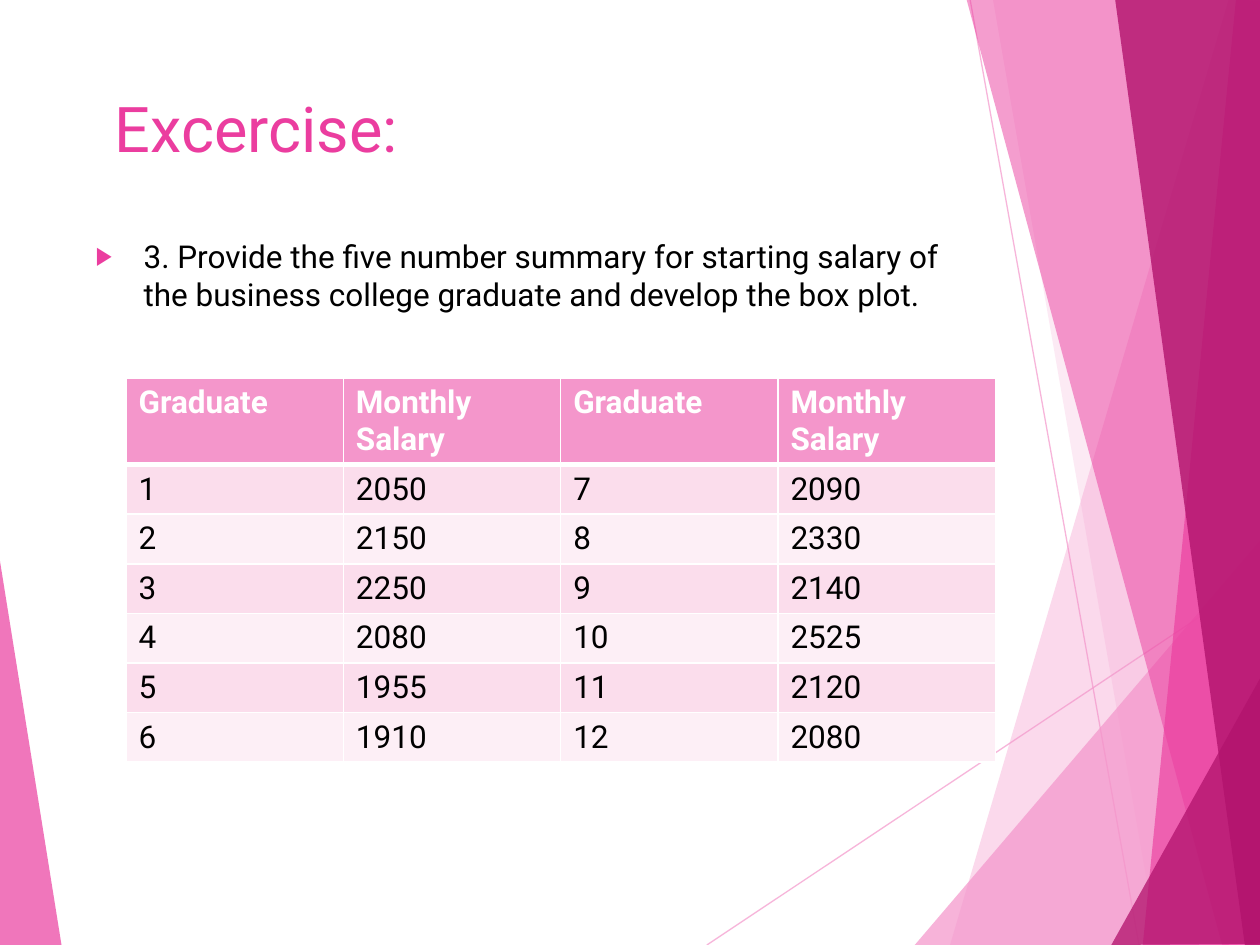
import pptx
import pptx.dml.color
import pptx.enum.shapes
import pptx.enum.text
import pptx.oxml
import pptx.oxml.ns
import pptx.util
from lxml import etree

Inches, Pt = pptx.util.Inches, pptx.util.Pt
RGBColor = pptx.dml.color.RGBColor
qn = pptx.oxml.ns.qn

WHITE = RGBColor(0xFF, 0xFF, 0xFF)
BLACK = RGBColor(0, 0, 0)
LIGHT = RGBColor(0xF4, 0x96, 0xCB)
PINK = RGBColor(0xEB, 0x3D, 0x9F)
DARK = RGBColor(0xB2, 0x13, 0x6D)
BANDS = [RGBColor(0xFB, 0xDD, 0xEC), RGBColor(0xFD, 0xEF, 0xF6)]
FONT = "Roboto"

TITLE = "Excercise:"
QUESTION = ("3. Provide the five number summary for starting salary of "
            "the business college graduate and develop the box plot.")
HEADERS = ["Graduate", "Monthly Salary"]
SALARIES = [2050, 2150, 2250, 2080, 1955, 1910, 2090, 2330, 2140, 2525, 2120, 2080]

RAYS = [((5.61, 7.5), (10.01, 4.57)), ((7.7, 0), (9.04, 7.5))]
FACETS = [
    (LIGHT, 36, [(9.75, 0), (7.54, 7.5), (10.02, 7.51), (10.01, 0.01)]),
    (LIGHT, 20, [(7.88, -0.01), (9.19, 7.5), (10.01, 7.5), (10.01, -0.01)]),
    (LIGHT, 72, [(7.26, 7.5), (10, 4.29), (10.01, 7.5)]),
    (PINK, 50, [(7.67, -0.01), (9.7, 7.5), (10.01, 7.49), (10.01, -0.01)]),
    (PINK, 66, [(9.81, -0.01), (9.07, 7.5), (10.01, 7.5), (10, -0.01)]),
    (DARK, 80, [(8.85, -0.01), (9.88, 7.5), (10.02, 7.5), (10, -0.01)]),
    (DARK, 76, [(8.82, 7.5), (10.02, 5.35), (10.02, 7.49)]),
    (PINK, 70, [(-0.01, 4.39), (0.49, 7.51), (-0.01, 7.5)]),
]


def set_alpha(sp, percent):
    clr = next(sp.element.spPr.iter(qn("a:srgbClr")))
    etree.SubElement(clr, qn("a:alpha"), val=str(percent * 1000))


def add_ray(slide, start, end):
    sp = slide.shapes.add_connector(pptx.enum.shapes.MSO_CONNECTOR.STRAIGHT,
                                    *[Inches(v) for v in start + end])
    sp.line.color.rgb = LIGHT
    sp.line.width = Pt(0.75)
    set_alpha(sp, 70)
    etree.SubElement(sp.element.spPr, qn("a:effectLst"))


def add_facet(slide, color, alpha, points):
    pts = [(Inches(x), Inches(y)) for x, y in points]
    fb = slide.shapes.build_freeform(*pts[0])
    fb.add_line_segments(pts[1:], close=True)
    sp = fb.convert_to_shape()
    sp.fill.solid()
    sp.fill.fore_color.rgb = color
    set_alpha(sp, alpha)
    sp.line.fill.background()
    sp.shadow.inherit = False


def write_text(tf, text, size=18, color=BLACK, bold=False):
    p = tf.paragraphs[0]
    p.alignment = pptx.enum.text.PP_ALIGN.LEFT
    r = p.add_run()
    r.text = text
    r.font.name = FONT
    r.font.size = Pt(size)
    r.font.bold = bold
    r.font.color.rgb = color
    return p


def place(sp, left, top, width, height):
    sp.left, sp.top, sp.width, sp.height = map(Inches, (left, top, width, height))
    tf = sp.text_frame
    tf.word_wrap = True
    tf.auto_size = pptx.enum.text.MSO_AUTO_SIZE.NONE
    tf.vertical_anchor = pptx.enum.text.MSO_ANCHOR.TOP
    sp.element.getparent().append(sp.element)
    return tf


def add_bullet(p):
    pPr = p._p.get_or_add_pPr()
    pPr.set("marL", str(Inches(0.38)))
    pPr.set("indent", str(Inches(-0.38)))
    clr = etree.SubElement(pPr, qn("a:buClr"))
    etree.SubElement(clr, qn("a:srgbClr"), val=str(PINK))
    etree.SubElement(pPr, qn("a:buSzPct"), val="80000")
    etree.SubElement(pPr, qn("a:buFont"), typeface="Arial")
    etree.SubElement(pPr, qn("a:buChar"), char="▶")


def set_borders(cell, top, bottom):
    tcPr = cell._tc.get_or_add_tcPr()
    for tag, width in (("lnL", 1), ("lnR", 1), ("lnT", top), ("lnB", bottom)):
        ln = etree.SubElement(tcPr, qn("a:" + tag), w=str(Pt(width)))
        fill = etree.SubElement(ln, qn("a:solidFill"))
        etree.SubElement(fill, qn("a:srgbClr"), val=str(WHITE))


def add_salary_table(slide):
    half = len(SALARIES) // 2
    rows = [HEADERS * 2]
    for i in range(half):
        rows.append([i + 1, SALARIES[i], i + 1 + half, SALARIES[i + half]])
    heights = [0.67] + [0.39] * half
    table = slide.shapes.add_table(len(rows), 4, Inches(1), Inches(3),
                                   Inches(6.9), Inches(sum(heights))).table
    for row, height in zip(table.rows, heights):
        row.height = Inches(height)
    for i, row in enumerate(rows):
        header = i == 0
        for j, value in enumerate(row):
            cell = table.cell(i, j)
            set_borders(cell, 3 if i == 1 else 1, 3 if header else 1)
            cell.fill.solid()
            cell.fill.fore_color.rgb = LIGHT if header else BANDS[(i - 1) % 2]
            write_text(cell.text_frame, str(value), bold=header,
                       color=WHITE if header else BLACK)


def main():
    prs = pptx.Presentation()
    prs.slide_width, prs.slide_height = Inches(10), Inches(7.5)
    slide = prs.slides.add_slide(prs.slide_layouts[1])
    for start, end in RAYS:
        add_ray(slide, start, end)
    for facet in FACETS:
        add_facet(slide, *facet)
    title, body = slide.shapes.title, slide.placeholders[1]
    write_text(place(title, 0.81, 0.66, 6.94, 1.44), TITLE, size=36, color=PINK)
    p = write_text(place(body, 0.66, 1.83, 6.94, 5.44), QUESTION)
    p.space_before = Pt(10)
    add_bullet(p)
    add_salary_table(slide)
    prs.save("out.pptx")


if __name__ == "__main__":
    main()
